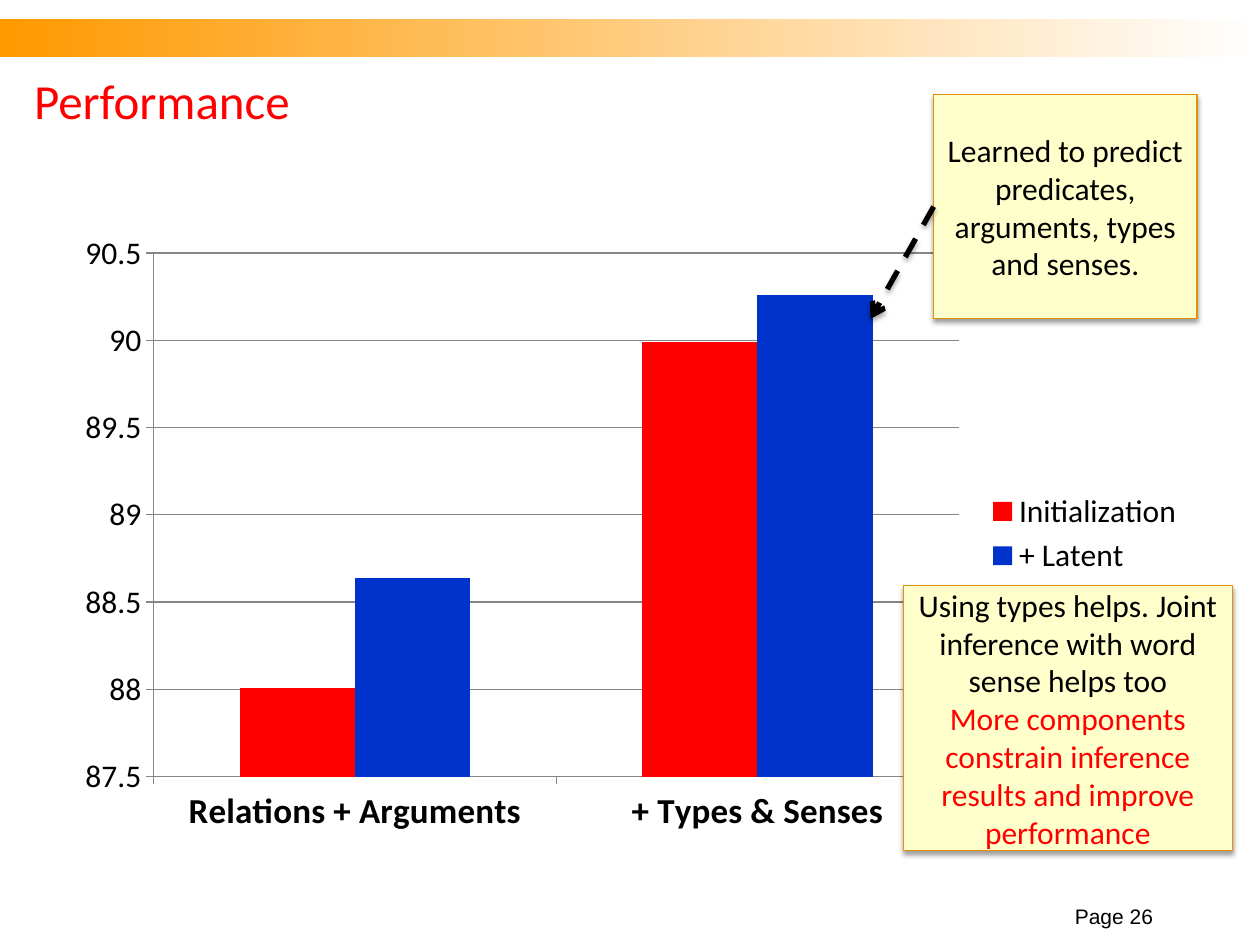
"""Build the Performance slide: a clustered column chart with two callouts."""
from lxml.etree import SubElement
from pptx import Presentation
from pptx.chart.data import CategoryChartData
from pptx.dml.color import RGBColor
from pptx.enum.chart import XL_CHART_TYPE, XL_LEGEND_POSITION, XL_TICK_MARK
from pptx.enum.dml import MSO_LINE
from pptx.enum.shapes import MSO_CONNECTOR, MSO_SHAPE
from pptx.enum.text import MSO_ANCHOR, PP_ALIGN
from pptx.oxml import parse_xml
from pptx.oxml.ns import nsdecls, qn
from pptx.util import Inches, Pt

RED = RGBColor(0xFF, 0x00, 0x00)
BLUE = RGBColor(0x00, 0x33, 0xCC)
BLACK = RGBColor(0x00, 0x00, 0x00)
WHITE = RGBColor(0xFF, 0xFF, 0xFF)
ORANGE = RGBColor(0xFF, 0x99, 0x00)
AMBER = RGBColor(0xE3, 0x91, 0x0A)
CREAM = RGBColor(0xFF, 0xFF, 0xCC)
GRAY = RGBColor(0x86, 0x86, 0x86)

TITLE = "Performance"
PAGE = "Page 26"
CATEGORIES = ["Relations + Arguments", "+ Types & Senses"]
SERIES = [
    ("Initialization", [88.01, 89.99], RED),
    ("+ Latent", [88.64, 90.26], BLUE),
]
CALLOUTS = [
    ((7.41, 0.75, 2.09, 1.78),
     [("Learned to predict predicates, arguments, types and senses.", BLACK)]),
    ((7.17, 4.65, 2.61, 2.1),
     [("Using types helps. Joint inference with word sense helps too", BLACK),
      ("More components constrain inference results and improve performance", RED)]),
]
ARROW = (7.41, 1.64, 6.91, 2.53)
PLOT_AREA = {"x": 0.08, "y": 0.05, "w": 0.71, "h": 0.84}

TITLE_FONT = {"name": "Calibri", "size": Pt(28), "bold": False}
BODY_FONT = {"name": "Calibri", "size": Pt(18), "bold": False}
CATEGORY_FONT = {"name": "Calibri", "size": Pt(20), "bold": True}
PAGE_FONT = {"name": "Arial", "size": Pt(12)}
VALUE_AXIS = {"minimum_scale": 87.5, "maximum_scale": 90.5, "major_unit": 0.5,
              "has_major_gridlines": True, "major_tick_mark": XL_TICK_MARK.OUTSIDE}


def inches(values):
    return [Inches(value) for value in values]


def apply_format(target, values):
    for attribute, value in values.items():
        setattr(target, attribute, value)


def style_font(font, values, color=BLACK):
    apply_format(font, values)
    font.color.rgb = color


def style_line(line, color, width):
    line.color.rgb = color
    line.width = Pt(width)


def write_text(frame, lines, font, align, anchor):
    apply_format(frame, {"word_wrap": True, "vertical_anchor": anchor})
    for index, (text, color) in enumerate(lines):
        paragraph = frame.paragraphs[0] if index == 0 else frame.add_paragraph()
        paragraph.text = text
        paragraph.alignment = align
        style_font(paragraph.font, font, color)


def add_shadow(properties, distance, opacity):
    properties.append(parse_xml(
        f'<a:effectLst {nsdecls("a")}><a:outerShdw blurRad="{Pt(3.1)}" dist="{Pt(distance)}" '
        f'dir="5400000" rotWithShape="0"><a:srgbClr val="000000">'
        f'<a:alpha val="{opacity * 1000}"/></a:srgbClr></a:outerShdw></a:effectLst>'))


def add_banner(slide):
    banner = slide.shapes.add_shape(MSO_SHAPE.RECTANGLE, *inches((0, 0.15, 10, 0.3)))
    banner.shadow.inherit = False
    banner.line.fill.background()
    banner.fill.gradient()
    banner.fill.gradient_angle = 0
    for stop, color, position in zip(banner.fill.gradient_stops, (ORANGE, WHITE), (0, 1)):
        stop.color.rgb = color
        stop.position = position


def add_title(slide):
    title = slide.shapes.title
    apply_format(title, dict(zip(("left", "top", "width", "height"),
                                 inches((0.17, 0.5, 9, 0.58)))))
    write_text(title.text_frame, [(TITLE, RED)], TITLE_FONT, PP_ALIGN.LEFT, MSO_ANCHOR.MIDDLE)


def set_plot_area(chart):
    plot_area = chart.plots[0]._element.getparent()
    layout = plot_area.find(qn("c:layout"))
    if layout is None:
        layout = plot_area.makeelement(qn("c:layout"))
        plot_area.insert(0, layout)
    manual = SubElement(layout, qn("c:manualLayout"))
    settings = {"layoutTarget": "inner", "xMode": "edge", "yMode": "edge", **PLOT_AREA}
    for tag, value in settings.items():
        SubElement(manual, qn(f"c:{tag}")).set("val", str(value))


def add_performance_chart(slide):
    data = CategoryChartData()
    data.categories = CATEGORIES
    for name, values, _ in SERIES:
        data.add_series(name, values)
    chart = slide.shapes.add_chart(
        XL_CHART_TYPE.COLUMN_CLUSTERED, *inches((0.5, 1.76, 9, 4.95)), data).chart
    apply_format(chart, {"has_title": False, "has_legend": True})
    style_font(chart.font, BODY_FONT)
    apply_format(chart.legend, {"position": XL_LEGEND_POSITION.RIGHT,
                                "include_in_layout": False})
    plot = chart.plots[0]
    apply_format(plot, {"gap_width": 150, "overlap": 0, "vary_by_categories": False})
    for series, (_, _, color) in zip(plot.series, SERIES):
        series.format.fill.solid()
        series.format.fill.fore_color.rgb = color
    apply_format(chart.value_axis, VALUE_AXIS)
    chart.category_axis.major_tick_mark = XL_TICK_MARK.OUTSIDE
    style_font(chart.category_axis.tick_labels.font, CATEGORY_FONT)
    for part in (chart.value_axis, chart.category_axis, chart.value_axis.major_gridlines):
        style_line(part.format.line, GRAY, 0.75)
    set_plot_area(chart)


def add_callout(slide, box, lines):
    callout = slide.shapes.add_shape(MSO_SHAPE.RECTANGLE, *inches(box))
    callout.fill.solid()
    callout.fill.fore_color.rgb = CREAM
    style_line(callout.line, AMBER, 0.75)
    add_shadow(callout._element.spPr, 1.6, 38)
    write_text(callout.text_frame, lines, BODY_FONT, PP_ALIGN.CENTER, MSO_ANCHOR.MIDDLE)


def add_arrow(slide):
    arrow = slide.shapes.add_connector(MSO_CONNECTOR.STRAIGHT, *inches(ARROW))
    style_line(arrow.line, BLACK, 3)
    arrow.line.dash_style = MSO_LINE.DASH
    SubElement(arrow.line._get_or_add_ln(), qn("a:tailEnd")).set("type", "arrow")
    add_shadow(arrow._element.spPr, 1.8, 35)


def add_page_number(slide):
    page = slide.shapes.add_textbox(*inches((8.25, 7.17, 1, 0.25)))
    write_text(page.text_frame, [(PAGE, BLACK)], PAGE_FONT, PP_ALIGN.RIGHT, MSO_ANCHOR.BOTTOM)


def main():
    deck = Presentation()
    apply_format(deck, {"slide_width": Inches(10), "slide_height": Inches(7.5)})
    slide = deck.slides.add_slide(deck.slide_layouts[5])
    add_banner(slide)
    add_title(slide)
    add_performance_chart(slide)
    for box, lines in CALLOUTS:
        add_callout(slide, box, lines)
    add_arrow(slide)
    add_page_number(slide)
    deck.save("out.pptx")


if __name__ == "__main__":
    main()
